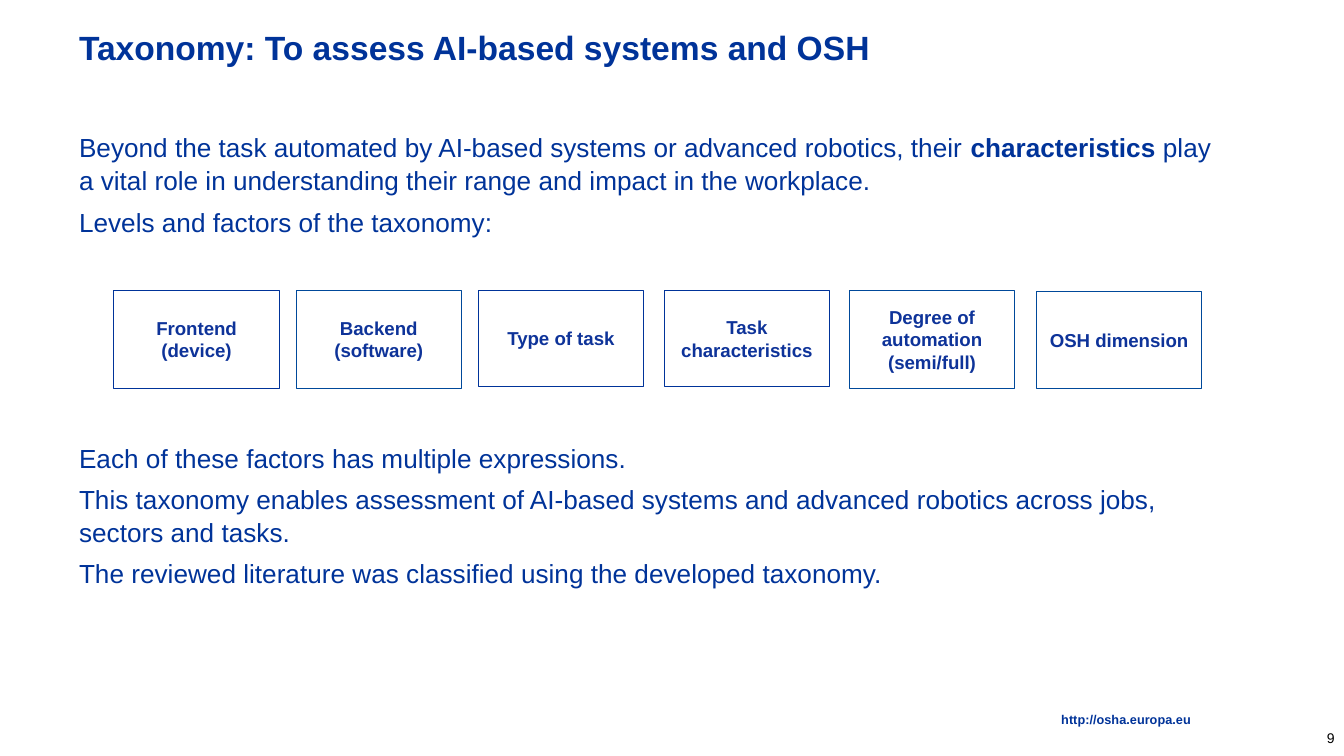
from dataclasses import dataclass

from pptx import Presentation
from pptx.dml.color import RGBColor
from pptx.enum.shapes import MSO_SHAPE
from pptx.enum.text import MSO_ANCHOR, PP_ALIGN
from pptx.slide import Slide
from pptx.text.text import Font, TextFrame
from pptx.util import Pt

NAVY = "003399"
FACTOR_TEXT = "0E3399"
TEAL = "00499A"
BODY_LEFT, BODY_WIDTH = 35.3, 630.7
FACTOR_WIDTH = 88.6


@dataclass
class Factor:
    label: str
    left: float
    top: float = 155.5
    height: float = 52.6
    outline: str = NAVY


FACTORS = [
    Factor("Frontend\n(device)", 61),
    Factor("Backend\n(software)", 158.6, outline=TEAL),
    Factor("Type of task", 256.2, height=51.6),
    Factor("Task characteristics", 355.8, height=51.6),
    Factor("Degree of automation (semi/full)", 455, outline=TEAL),
    Factor("OSH dimension", 555.2, top=156.2, height=52, outline=TEAL),
]

INTRODUCTION = [
    [
        "Beyond the task automated by AI-based systems or advanced robotics, their ",
        "characteristics",
        " play a vital role in understanding their range and impact in the workplace.",
    ],
    ["Levels and factors of the taxonomy:"],
]
CONCLUSIONS = [
    ["Each of these factors has multiple expressions."],
    ["This taxonomy enables assessment of AI-based systems and advanced robotics across jobs, sectors and tasks."],
    ["The reviewed literature was classified using the developed taxonomy."],
]


def rgb(value: str) -> RGBColor:
    return RGBColor.from_string(value)


def style(font: Font, size: float, color: str, bold: bool = False) -> None:
    font.name = "Arial"
    font.size = Pt(size)
    font.bold = bold
    font.color.rgb = rgb(color)


def add_frame(slide: Slide, left: float, top: float, width: float, height: float) -> TextFrame:
    frame = slide.shapes.add_textbox(Pt(left), Pt(top), Pt(width), Pt(height)).text_frame
    frame.word_wrap = True
    return frame


def add_body(slide: Slide, top: float, height: float, paragraphs: list[list[str]]) -> None:
    frame = add_frame(slide, BODY_LEFT, top, BODY_WIDTH, height)
    for index, parts in enumerate(paragraphs):
        paragraph = frame.add_paragraph() if index else frame.paragraphs[0]
        paragraph.line_spacing = 1.05
        if index:
            paragraph.space_before = Pt(4.5)
        style(paragraph.font, 14, NAVY)
        for part in parts:
            run = paragraph.add_run()
            run.text = part
            if part == "characteristics":
                run.font.bold = True


def add_factor(slide: Slide, factor: Factor) -> None:
    box = slide.shapes.add_shape(
        MSO_SHAPE.RECTANGLE, Pt(factor.left), Pt(factor.top), Pt(FACTOR_WIDTH), Pt(factor.height)
    )
    box.shadow.inherit = False
    box.fill.solid()
    box.fill.fore_color.rgb = rgb("FFFFFF")
    box.line.color.rgb = rgb(factor.outline)
    box.line.width = Pt(0.5)
    box.text_frame.word_wrap = True
    box.text_frame.vertical_anchor = MSO_ANCHOR.MIDDLE
    label = box.text_frame.paragraphs[0]
    label.text = factor.label
    label.alignment = PP_ALIGN.CENTER
    style(label.font, 10, FACTOR_TEXT, bold=True)


def add_title(slide: Slide) -> None:
    frame = add_frame(slide, BODY_LEFT, 10.8, 595.4, 28.8)
    frame.vertical_anchor = MSO_ANCHOR.MIDDLE
    title = frame.paragraphs[0]
    title.text = "Taxonomy: To assess AI-based systems and OSH"
    style(title.font, 18, NAVY, bold=True)


def add_footer(slide: Slide) -> None:
    frame = add_frame(slide, 178.6, 382.3, 459.4, 6.5)
    frame.margin_left = frame.margin_right = frame.margin_top = frame.margin_bottom = 0
    address = frame.paragraphs[0]
    address.text = "http://osha.europa.eu"
    address.alignment = PP_ALIGN.RIGHT
    address.line_spacing = 0.9
    style(address.font, 6.8, NAVY, bold=True)

    frame = add_frame(slide, 671.8, 384.5, 48.2, 21.6)
    frame.vertical_anchor = MSO_ANCHOR.MIDDLE
    frame.margin_left = frame.margin_right = Pt(5)
    frame.margin_top = frame.margin_bottom = Pt(3)
    number = frame.paragraphs[0]
    number.text = "9"
    number.alignment = PP_ALIGN.RIGHT
    style(number.font, 7.5, "000000")


def main() -> None:
    presentation = Presentation()
    presentation.slide_width = Pt(720)
    presentation.slide_height = Pt(405)
    slide = presentation.slides.add_slide(presentation.slide_layouts[6])
    add_title(slide)
    add_body(slide, 66.2, 70, INTRODUCTION)
    for factor in FACTORS:
        add_factor(slide, factor)
    add_body(slide, 232.4, 90, CONCLUSIONS)
    add_footer(slide)
    presentation.save("out.pptx")


if __name__ == "__main__":
    main()
